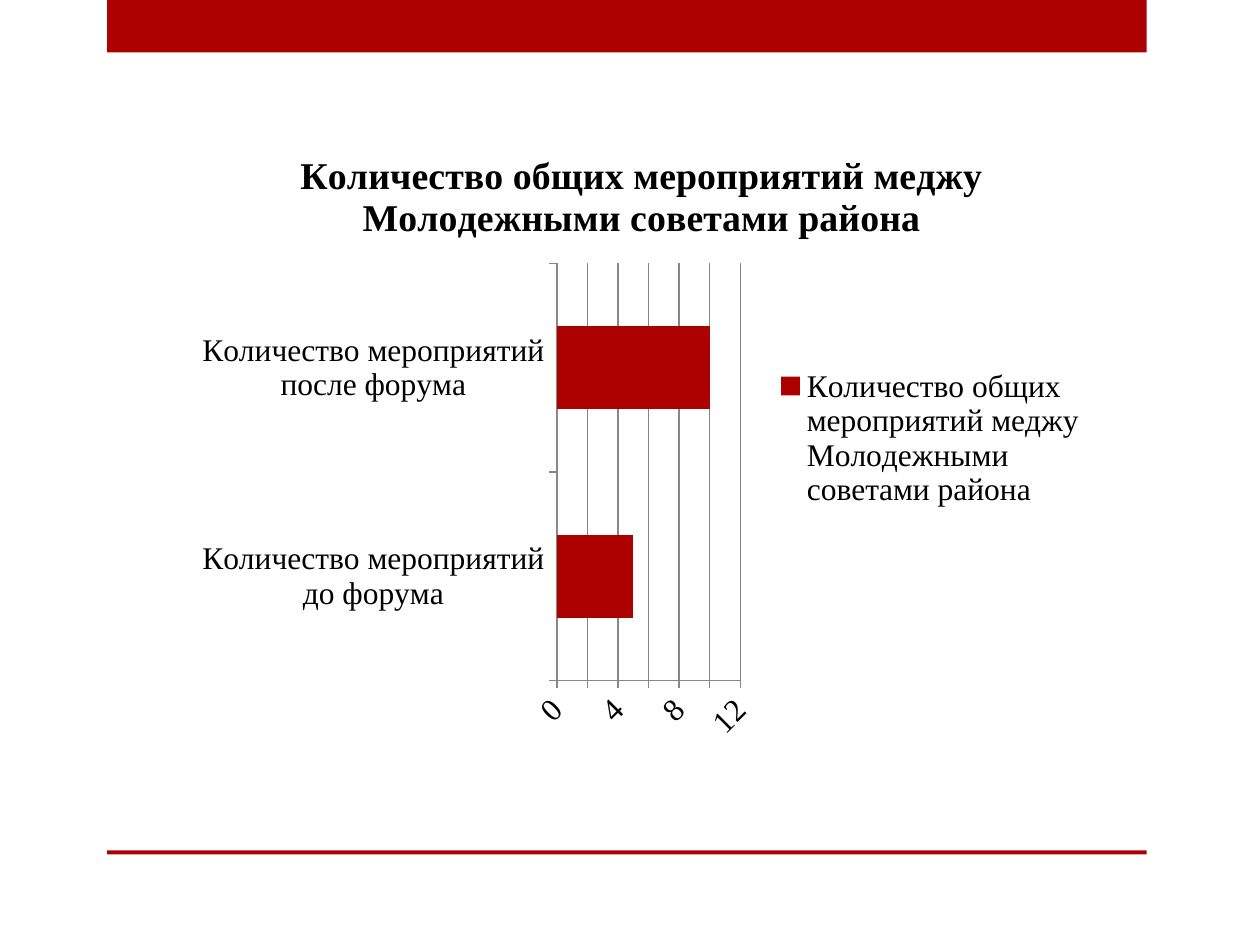
from dataclasses import dataclass

from pptx import Presentation
from pptx.chart.data import CategoryChartData
from pptx.dml.color import RGBColor
from pptx.enum.chart import XL_CHART_TYPE, XL_LEGEND_POSITION, XL_TICK_MARK
from pptx.enum.shapes import MSO_SHAPE
from pptx.util import Pt


@dataclass(frozen=True)
class Theme:
    red: RGBColor = RGBColor(0xAD, 0x01, 0x01)
    black: RGBColor = RGBColor(0, 0, 0)
    grey: RGBColor = RGBColor(0x87, 0x87, 0x87)
    font: str = "Times New Roman"
    body_size: float = 18
    title_size: float = 21.6
    line_width: float = 0.75


THEME = Theme()
SLIDE_SIZE = (720, 540)
BAND_LEFT, BAND_WIDTH = 61.2, 594
BANDS = [(0, 30), (486, 2.2)]  # top, height
CHART_FRAME = (105.1, 71.3, 523.4, 358.6)

SERIES_NAME = "Количество общих мероприятий меджу Молодежными советами района"
EVENTS = {
    "Количество мероприятий до форума": 5,
    "Количество мероприятий после форума": 10,
}


def style_font(font, size, bold=False):
    font.name = THEME.font
    font.size = Pt(size)
    font.bold = bold
    font.color.rgb = THEME.black


def style_line(line):
    line.color.rgb = THEME.grey
    line.width = Pt(THEME.line_width)


def add_band(page, top, height):
    frame = (BAND_LEFT, top, BAND_WIDTH, height)
    band = page.shapes.add_shape(MSO_SHAPE.RECTANGLE, *map(Pt, frame))
    band.shadow.inherit = False
    band.fill.solid()
    band.fill.fore_color.rgb = THEME.red
    band.line.fill.background()


def add_events_chart(page):
    data = CategoryChartData()
    data.categories = list(EVENTS)
    data.add_series(SERIES_NAME, list(EVENTS.values()))
    chart = page.shapes.add_chart(
        XL_CHART_TYPE.BAR_CLUSTERED, *map(Pt, CHART_FRAME), data
    ).chart
    style_font(chart.font, THEME.body_size)

    chart.has_title = True
    chart.chart_title.include_in_layout = False
    title = chart.chart_title.text_frame
    title.text = SERIES_NAME
    style_font(title.paragraphs[0].font, THEME.title_size, bold=True)

    chart.has_legend = True
    chart.legend.position = XL_LEGEND_POSITION.RIGHT
    chart.legend.include_in_layout = False

    for axis in (chart.category_axis, chart.value_axis):
        axis.major_tick_mark = XL_TICK_MARK.OUTSIDE
        style_line(axis.format.line)
    chart.value_axis.has_major_gridlines = True
    style_line(chart.value_axis.major_gridlines.format.line)

    plot = chart.plots[0]
    plot.vary_by_categories = False
    plot.gap_width = 150
    fill = plot.series[0].format.fill
    fill.solid()
    fill.fore_color.rgb = THEME.red


def main():
    deck = Presentation()
    deck.slide_width, deck.slide_height = map(Pt, SLIDE_SIZE)
    page = deck.slides.add_slide(deck.slide_layouts.get_by_name("Blank"))
    for top, height in BANDS:
        add_band(page, top, height)
    add_events_chart(page)
    deck.save("out.pptx")


if __name__ == "__main__":
    main()
